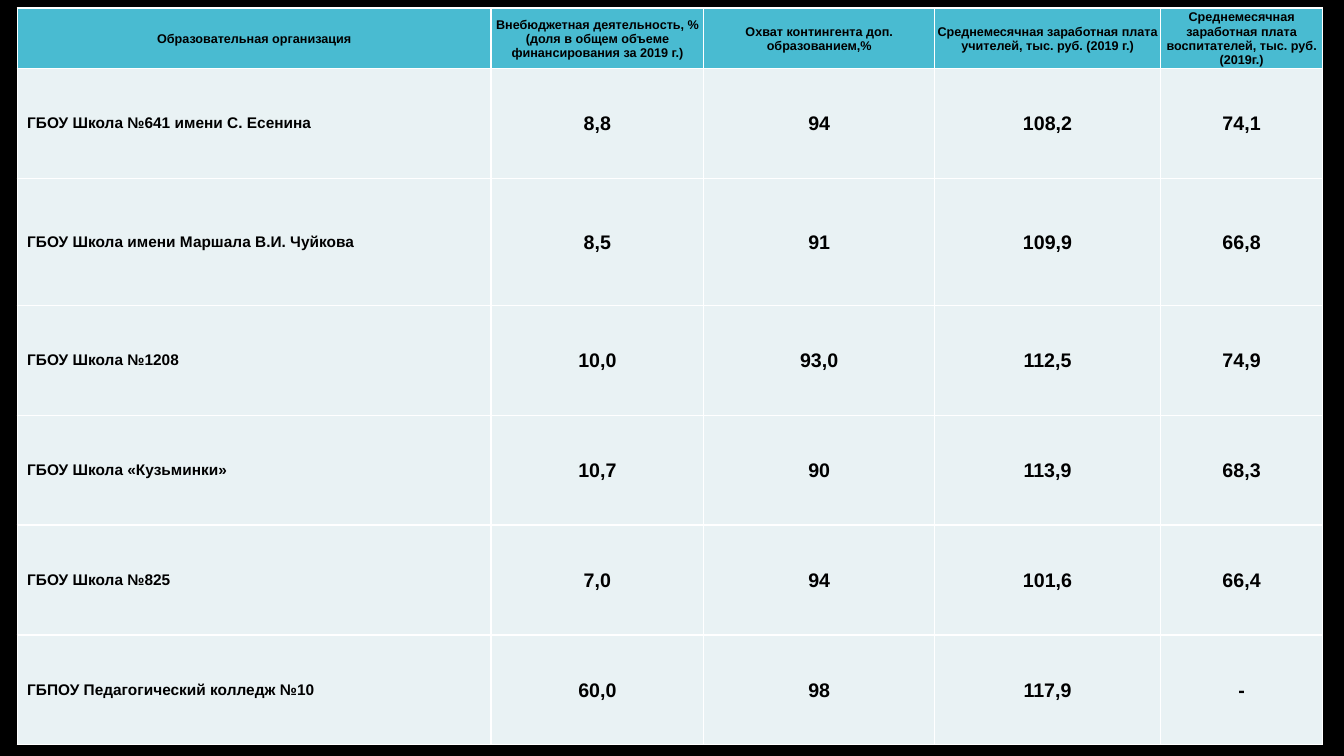
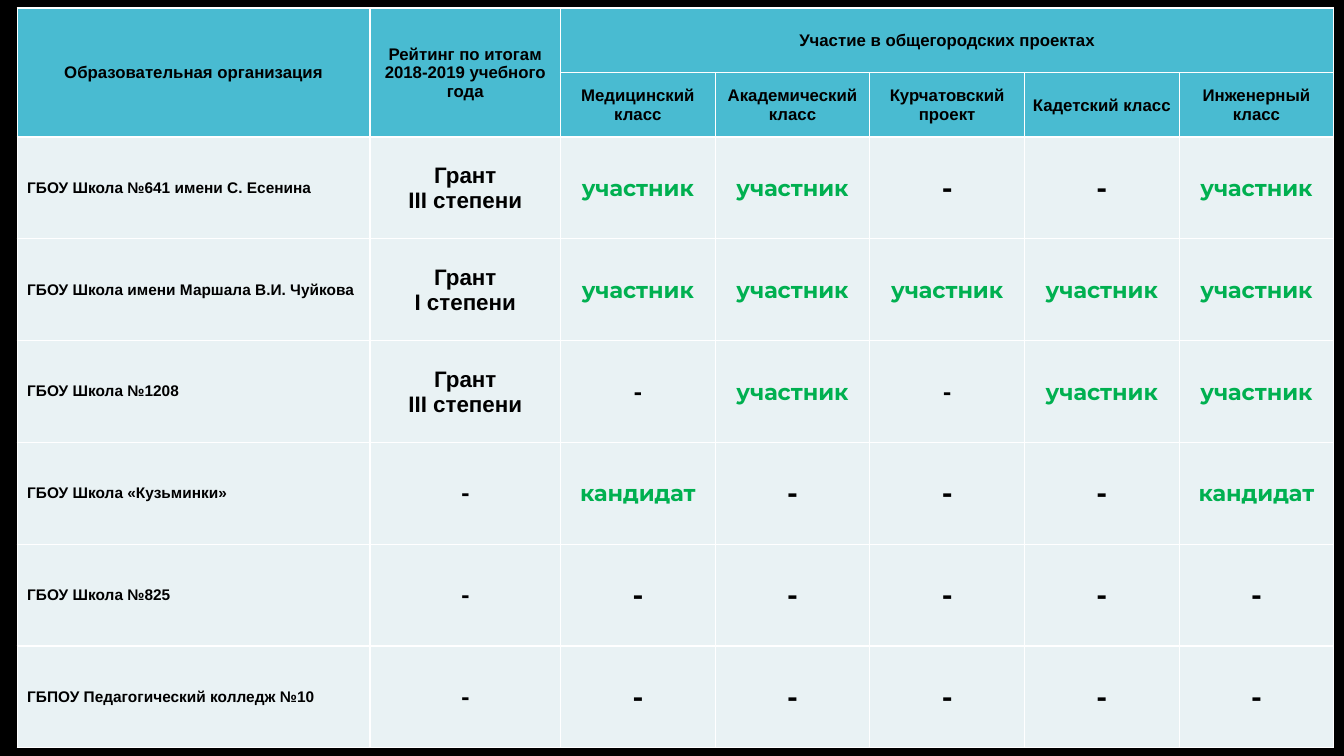
from lxml import etree
from pptx import Presentation
from pptx.dml.color import RGBColor
from pptx.enum.text import MSO_ANCHOR as Anchor, PP_ALIGN as Align
from pptx.oxml.ns import qn
from pptx.util import Inches, Pt

COLORS = {
    "background": "000000",
    "header": "49BBD1",
    "body": "E9F2F4",
    "border": "FFFFFF",
    "text": "000000",
    "active": "00B050",
}
FONT, ACCENT_FONT = "Arial", "Montserrat"

SCHOOLS = [
    "ГБОУ Школа №641 имени С. Есенина",
    "ГБОУ Школа имени Маршала В.И. Чуйкова",
    "ГБОУ Школа №1208",
    "ГБОУ Школа «Кузьминки»",
    "ГБОУ Школа №825",
    "ГБПОУ Педагогический колледж №10",
]
ORGANIZATION = "Образовательная организация"

# Finance: column headings and one row of figures per school
FINANCE_HEADINGS = [
    ORGANIZATION,
    "Внебюджетная деятельность, % (доля в общем объеме финансирования за 2019 г.)",
    "Охват контингента доп. образованием,%",
    "Среднемесячная заработная плата учителей, тыс. руб. (2019 г.)",
    "Среднемесячная заработная плата воспитателей, тыс. руб. (2019г.)",
]
FINANCE = [
    ["8,8", "94", "108,2", "74,1"],
    ["8,5", "91", "109,9", "66,8"],
    ["10,0", "93,0", "112,5", "74,9"],
    ["10,7", "90", "113,9", "68,3"],
    ["7,0", "94", "101,6", "66,4"],
    ["60,0", "98", "117,9", "-"],
]

# City projects: rating, dash size and status in each project per school
RATING = "Рейтинг по итогам 2018-2019 учебного года"
PARTICIPATION = "Участие в общегородских проектах"
PROJECTS = ["Медицинский класс", "Академический класс", "Курчатовский проект",
            "Кадетский класс", "Инженерный класс"]
MEMBER, CANDIDATE, NONE = "участник", "кандидат", "-"
STATUSES = [
    ("Грант\nIII степени", 20, [MEMBER, MEMBER, NONE, NONE, MEMBER]),
    ("Грант\nI степени", 20, [MEMBER] * 5),
    ("Грант\nIII степени", 16, [NONE, MEMBER, NONE, MEMBER, MEMBER]),
    (NONE, 20, [CANDIDATE, NONE, NONE, NONE, CANDIDATE]),
    (NONE, 20, [NONE] * 5),
    (NONE, 20, [NONE] * 5),
]


def write_text(frame, text, size=14, font=FONT, color="text", align=Align.CENTER):
    """Write bold text, one paragraph per line."""
    for i, line in enumerate(text.split("\n")):
        paragraph = frame.add_paragraph() if i else frame.paragraphs[0]
        paragraph.alignment = align
        run = paragraph.add_run()
        run.text = line
        run.font.size = Pt(size)
        run.font.name = font
        run.font.bold = True
        run.font.color.rgb = RGBColor.from_string(COLORS[color])


class Deck:
    def __init__(self):
        self.prs = Presentation()
        self.prs.slide_width, self.prs.slide_height = Inches(13.33), Inches(7.5)
        fill = self.prs.slide_master.background.fill
        fill.solid()
        fill.fore_color.rgb = RGBColor.from_string(COLORS["background"])
        self.slide = None

    def new_slide(self):
        self.slide = self.prs.slides.add_slide(self.prs.slide_layouts[6])

    def table(self, widths, heights, header_rows=1):
        """Add an empty styled table with a header band."""
        table = self.slide.shapes.add_table(
            len(heights), len(widths), Inches(0.17), Inches(0.08),
            Inches(sum(widths)), Inches(sum(heights))).table
        for column, width in zip(table.columns, widths):
            column.width = Inches(width)
        for r, (row, height) in enumerate(zip(table.rows, heights)):
            row.height = Inches(height)
            for cell in row.cells:
                self.style_cell(cell, "header" if r < header_rows else "body")
        return table

    def style_cell(self, cell, fill):
        cell.fill.solid()
        cell.fill.fore_color.rgb = RGBColor.from_string(COLORS[fill])
        cell.vertical_anchor = Anchor.MIDDLE
        properties = cell._tc.get_or_add_tcPr()
        for i, side in enumerate(("a:lnL", "a:lnR", "a:lnT", "a:lnB")):
            line = etree.Element(qn(side), w=str(Pt(1)))
            solid = etree.SubElement(line, qn("a:solidFill"))
            etree.SubElement(solid, qn("a:srgbClr"), val=COLORS["border"])
            properties.insert(i, line)

    def value(self, cell, text, **style):
        """Fill a centred cell with tight margins."""
        cell.margin_left = cell.margin_right = cell.margin_top = Inches(0.01)
        cell.margin_bottom = 0
        write_text(cell.text_frame, text, **style)

    def school_names(self, table, first_row):
        for r, school in enumerate(SCHOOLS, first_row):
            write_text(table.cell(r, 0).text_frame, school, size=11, align=Align.LEFT)


def finance_slide(deck):
    deck.new_slide()
    table = deck.table([4.7, 2.11, 2.29, 2.24, 1.61], [0.6, 1.09, 1.26] + [1.09] * 4)
    for c, heading in enumerate(FINANCE_HEADINGS):
        deck.value(table.cell(0, c), heading, size=9)
    deck.school_names(table, 1)
    for r, figures in enumerate(FINANCE, 1):
        for c, figure in enumerate(figures, 1):
            deck.value(table.cell(r, c), figure)


def projects_slide(deck):
    deck.new_slide()
    project_width = (13.06 - 3.5 - 1.89) / len(PROJECTS)
    table = deck.table([3.5, 1.89] + [project_width] * len(PROJECTS),
                       [0.64] * 2 + [1.01] * len(SCHOOLS), header_rows=2)

    # Two-level header
    for c, heading in enumerate([ORGANIZATION, RATING]):
        table.cell(0, c).merge(table.cell(1, c))
        deck.value(table.cell(0, c), heading, size=12)
    table.cell(0, 2).merge(table.cell(0, len(PROJECTS) + 1))
    deck.value(table.cell(0, 2), PARTICIPATION, size=12)
    for c, project in enumerate(PROJECTS, 2):
        deck.value(table.cell(1, c), project, size=12)

    # Ratings and statuses
    deck.school_names(table, 2)
    for r, (rating, dash_size, statuses) in enumerate(STATUSES, 2):
        deck.value(table.cell(r, 1), rating, size=16,
                   font=ACCENT_FONT if rating == NONE else FONT)
        for c, status in enumerate(statuses, 2):
            absent = status == NONE
            deck.value(table.cell(r, c), status, font=ACCENT_FONT,
                       size=dash_size if absent else 16,
                       color="text" if absent else "active")


def main():
    deck = Deck()
    finance_slide(deck)
    projects_slide(deck)
    deck.prs.save("out.pptx")


if __name__ == "__main__":
    main()
